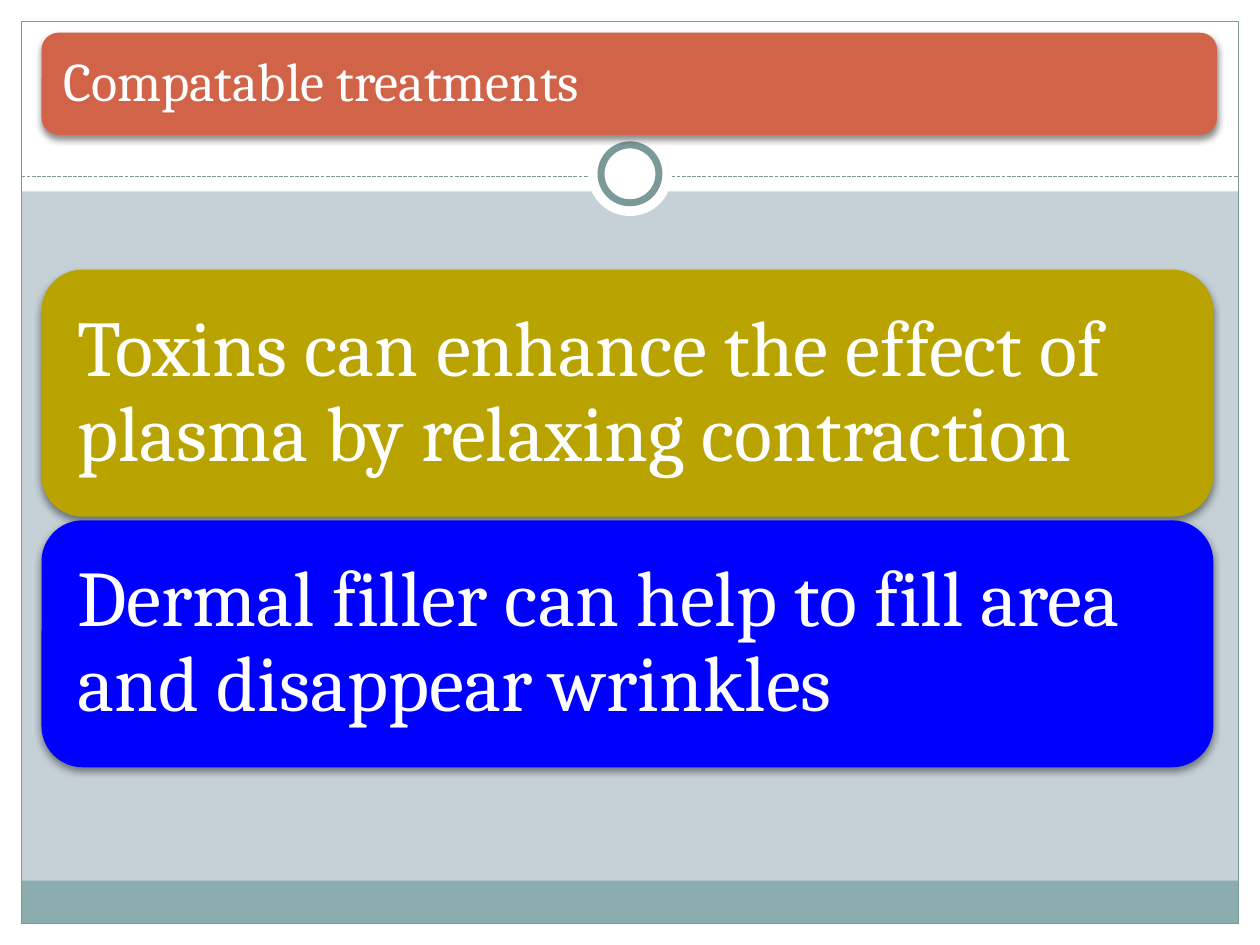
from dataclasses import dataclass
from typing import Optional

from lxml.etree import SubElement
from pptx import Presentation
from pptx.dml.color import RGBColor
from pptx.enum.dml import MSO_LINE
from pptx.enum.shapes import MSO_CONNECTOR, MSO_SHAPE
from pptx.enum.text import MSO_ANCHOR, MSO_AUTO_SIZE, PP_ALIGN
from pptx.oxml.ns import qn
from pptx.util import Inches, Pt


@dataclass(frozen=True)
class Theme:
    font: str = "Cambria"
    title_size: int = 31
    card_size: int = 45
    background: str = "C5D1D7"
    white: str = "FFFFFF"
    rule: str = "7C999A"
    footer: str = "8CADAE"
    banner: str = "D16349"
    olive: str = "B9A300"
    blue: str = "0000FF"
    shadow: str = "000000"


@dataclass(frozen=True)
class Box:
    left: float
    top: float
    width: float
    height: float
    fill: Optional[str] = None
    line: Optional[str] = None
    line_width: float = 0.75
    kind: MSO_SHAPE = MSO_SHAPE.RECTANGLE


@dataclass(frozen=True)
class Card:
    text: str
    fill: str


THEME = Theme()
WIDTH, HEIGHT, MARGIN = 10, 7.5, 0.17
HEADER_HEIGHT, RULE_Y = 1.52, 1.4
CARD_LEFT, CARD_TOP, CARD_WIDTH, CARD_HEIGHT, CARD_PITCH = 0.33, 2.14, 9.3, 1.96, 1.99


def color(value: str) -> RGBColor:
    return RGBColor.from_string(value)


def draw_box(slide, box: Box):
    shape = slide.shapes.add_shape(
        box.kind, Inches(box.left), Inches(box.top), Inches(box.width), Inches(box.height))
    shape.shadow.inherit = False
    if box.fill:
        shape.fill.solid()
        shape.fill.fore_color.rgb = color(box.fill)
    else:
        shape.fill.background()
    if box.line:
        shape.line.color.rgb = color(box.line)
        shape.line.width = Pt(box.line_width)
    else:
        shape.line.fill.background()
    return shape


def draw_ring(slide, center_y: float, size: float, line: Optional[str] = None) -> None:
    draw_box(slide, Box((WIDTH - size) / 2, center_y - size / 2, size, size,
                        THEME.white, line, 4, MSO_SHAPE.OVAL))


def add_soft_shadow(shape) -> None:
    effects = shape._element.spPr.find(qn("a:effectLst"))
    shadow = SubElement(effects, qn("a:outerShdw"), blurRad=str(Pt(4)), dist=str(Pt(2)),
                        dir="5400000", algn="ctr", rotWithShape="0")
    tint = SubElement(shadow, qn("a:srgbClr"), val=THEME.shadow)
    SubElement(tint, qn("a:alpha"), val="45000")


def write_text(shape, text: str, size: int, inset: float) -> None:
    frame = shape.text_frame
    frame.word_wrap = True
    frame.auto_size = MSO_AUTO_SIZE.NONE
    frame.vertical_anchor = MSO_ANCHOR.MIDDLE
    frame.margin_left = frame.margin_right = Inches(inset)
    frame.margin_top = frame.margin_bottom = Inches(inset)
    paragraph = frame.paragraphs[0]
    paragraph.alignment = PP_ALIGN.LEFT
    paragraph.line_spacing = 0.9
    run = paragraph.add_run()
    run.text = text
    run.font.name = THEME.font
    run.font.size = Pt(size)
    run.font.color.rgb = color(THEME.white)


def draw_backdrop(slide) -> None:
    slide.background.fill.solid()
    slide.background.fill.fore_color.rgb = color(THEME.background)
    inner_width = WIDTH - 2 * MARGIN
    for box in (
        Box(0, HEIGHT - MARGIN, WIDTH, MARGIN, THEME.white),
        Box(0, 0, WIDTH, HEADER_HEIGHT, THEME.white),
        Box(0, 0, MARGIN, HEIGHT, THEME.white),
        Box(WIDTH - MARGIN, 0, MARGIN, HEIGHT, THEME.white),
        Box(MARGIN, 6.99, inner_width, 0.34, THEME.footer),
        Box(MARGIN, MARGIN, inner_width, HEIGHT - 2 * MARGIN, line=THEME.rule),
    ):
        draw_box(slide, box)

    # Dashed rule with the ring on it
    rule = slide.shapes.add_connector(
        MSO_CONNECTOR.STRAIGHT, Inches(MARGIN), Inches(RULE_Y),
        Inches(WIDTH - MARGIN), Inches(RULE_Y))
    rule.line.color.rgb = color(THEME.rule)
    rule.line.width = Pt(0.75)
    rule.line.dash_style = MSO_LINE.SQUARE_DOT
    SubElement(rule._element.spPr, qn("a:effectLst"))
    draw_ring(slide, 1.38, 0.67)
    draw_ring(slide, 1.38, 0.46, THEME.rule)


def draw_title(slide, text: str) -> None:
    banner = draw_box(slide, Box(0.33, 0.26, 9.33, 0.81, THEME.banner,
                                 kind=MSO_SHAPE.ROUNDED_RECTANGLE))
    add_soft_shadow(banner)
    title = slide.shapes.title
    title.left, title.top = Inches(0.37), Inches(0.3)
    title.width, title.height = Inches(9.25), Inches(0.73)
    write_text(title, text, THEME.title_size, 0.13)
    # Bring the title in front of its banner
    banner._element.addnext(title._element)


def draw_card(slide, card: Card, top: float) -> None:
    shape = draw_box(slide, Box(CARD_LEFT, top, CARD_WIDTH, CARD_HEIGHT, card.fill,
                                kind=MSO_SHAPE.ROUNDED_RECTANGLE))
    add_soft_shadow(shape)
    write_text(shape, card.text, THEME.card_size, 0.19)


def main() -> None:
    presentation = Presentation()
    presentation.slide_width, presentation.slide_height = Inches(WIDTH), Inches(HEIGHT)
    slide = presentation.slides.add_slide(presentation.slide_layouts[5])
    draw_backdrop(slide)
    draw_title(slide, "Compatable treatments")

    # Treatment cards
    cards = (
        Card("Toxins can enhance the effect of plasma by relaxing contraction", THEME.olive),
        Card("Dermal filler can help to fill area and disappear wrinkles", THEME.blue),
    )
    for index, card in enumerate(cards):
        draw_card(slide, card, CARD_TOP + index * CARD_PITCH)

    presentation.save("out.pptx")


if __name__ == "__main__":
    main()
